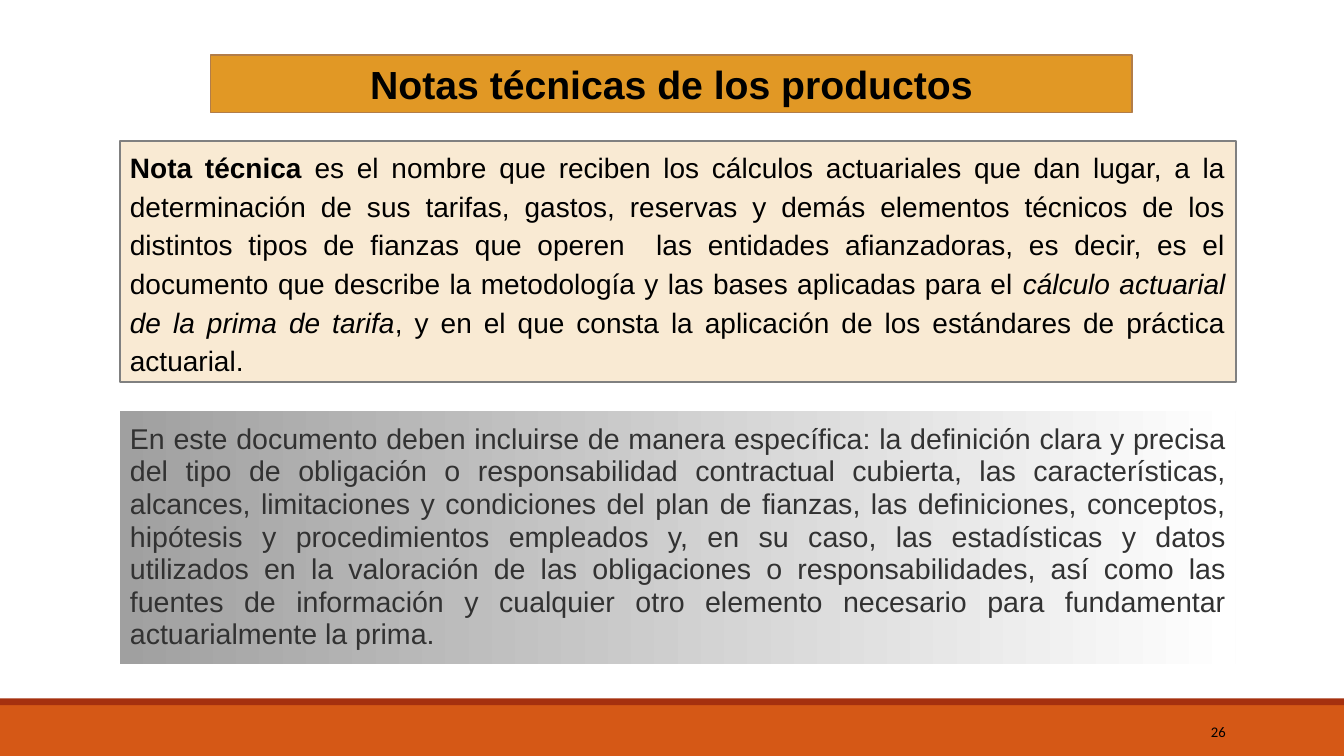
"""Build the slide on the technical notes of surety products."""
from dataclasses import dataclass

from lxml import etree
from pptx import Presentation
from pptx.dml.color import RGBColor
from pptx.enum.shapes import MSO_SHAPE
from pptx.enum.text import MSO_ANCHOR, MSO_AUTO_SIZE, PP_ALIGN
from pptx.oxml.ns import qn
from pptx.util import Cm, Pt

RECT = MSO_SHAPE.RECTANGLE
TOP, MIDDLE = MSO_ANCHOR.TOP, MSO_ANCHOR.MIDDLE
CENTER, JUSTIFY, RIGHT = PP_ALIGN.CENTER, PP_ALIGN.JUSTIFY, PP_ALIGN.RIGHT
NO_AUTOFIT = MSO_AUTO_SIZE.NONE

BLACK = RGBColor(0x00, 0x00, 0x00)
WHITE = RGBColor(0xFF, 0xFF, 0xFF)
CHARCOAL = RGBColor(0x32, 0x32, 0x32)
SILVER = RGBColor(0xA0, 0xA0, 0xA0)
GRAY = RGBColor(0x80, 0x80, 0x80)
CREAM = RGBColor(0xF9, 0xEA, 0xD3)
AMBER = RGBColor(0xE1, 0x98, 0x25)
BROWN = RGBColor(0xB2, 0x7D, 0x49)
ORANGE = RGBColor(0xD5, 0x58, 0x16)
RED = RGBColor(0xA5, 0x30, 0x0F)

SLIDE_W, SLIDE_H = Cm(33.87), Cm(19.05)
LEFT, WIDTH = 3.02, 28.12


@dataclass
class Run:
    text: str
    bold: bool = False
    italic: bool = False


@dataclass
class Style:
    size: float
    color: RGBColor
    align: PP_ALIGN
    anchor: MSO_ANCHOR = MSO_ANCHOR.MIDDLE
    font: str = "Arial"
    spacing: float = 1.0
    before: float = 0
    after: float = 0


@dataclass
class Panel:
    idx: int
    box: tuple[float, float, float, float]
    runs: list[Run]
    style: Style
    fill: RGBColor | None = None
    line: RGBColor | None = None
    line_width: float = 1


@dataclass
class Band:
    top: float
    height: float
    color: RGBColor


PANELS = [
    Panel(0, (5.31, 1.39, 23.22, 1.45),
          [Run("Notas técnicas de los productos", bold=True)],
          Style(28, BLACK, CENTER, TOP), AMBER, BROWN),
    Panel(1, (LEFT, 3.55, WIDTH, 6.07),
          [Run("Nota técnica ", bold=True),
           Run("es el nombre que reciben los cálculos actuariales que dan lugar, a la "
               "determinación de sus tarifas, gastos, reservas y demás elementos técnicos "
               "de los distintos tipos de fianzas que operen  las entidades afianzadoras, "
               "es decir, es el documento que describe la metodología y las bases "
               "aplicadas para el "),
           Run("cálculo actuarial de la prima de tarifa", italic=True),
           Run(", y en el que consta la aplicación de los estándares de práctica "
               "actuarial.")],
          Style(20, BLACK, JUSTIFY, spacing=1.15, after=10), CREAM, GRAY, 1.25),
    Panel(2, (LEFT, 10.35, WIDTH, 6.38),
          [Run("En este documento deben incluirse de manera específica: la definición "
               "clara y precisa del tipo de obligación o responsabilidad contractual "
               "cubierta, las características, alcances, limitaciones y condiciones del "
               "plan de fianzas, las definiciones, conceptos, hipótesis y procedimientos "
               "empleados y, en su caso, las estadísticas y datos utilizados en la "
               "valoración de las obligaciones o responsabilidades, así como las fuentes "
               "de información y cualquier otro elemento necesario para fundamentar "
               "actuarialmente la prima.")],
          Style(20.4, CHARCOAL, JUSTIFY, spacing=0.95, before=4)),
]
BANDS = [Band(17.77, 1.28, ORANGE), Band(17.6, 0.17, RED)]


def write(shape, runs: list[Run], style: Style) -> None:
    """Fill a shape with one formatted, unbulleted paragraph."""
    tf = shape.text_frame
    tf.word_wrap = True
    tf.auto_size = NO_AUTOFIT
    tf.vertical_anchor = style.anchor
    p = tf.paragraphs[0]
    p.alignment = style.align
    p.line_spacing = style.spacing
    p.space_before, p.space_after = Pt(style.before), Pt(style.after)
    p.font.name, p.font.size = style.font, Pt(style.size)
    p.font.color.rgb = style.color
    pPr = p._p.get_or_add_pPr()
    pPr.set("marL", "0")
    pPr.set("indent", "0")
    pPr.insert_element_before(etree.Element(qn("a:buNone")), "a:tabLst", "a:defRPr")
    for run in runs:
        r = p.add_run()
        r.text = run.text
        r.font.bold, r.font.italic = run.bold, run.italic
        r.font.name, r.font.size = style.font, Pt(style.size)
        r.font.color.rgb = style.color


def draw_panel(s, panel: Panel) -> None:
    """Place, paint and fill one placeholder."""
    sp = s.placeholders[panel.idx]
    sp.left, sp.top, sp.width, sp.height = (Cm(v) for v in panel.box)
    if panel.fill is None:
        sp.fill.gradient()
        sp.fill.gradient_angle = 0
        for stop, color in zip(sp.fill.gradient_stops, (SILVER, WHITE)):
            stop.color.rgb = color
    else:
        sp.fill.solid()
        sp.fill.fore_color.rgb = panel.fill
    if panel.line is None:
        sp.line.fill.background()
    else:
        sp.line.color.rgb = panel.line
        sp.line.width = Pt(panel.line_width)
    write(sp, panel.runs, panel.style)


def draw_band(s, band: Band) -> None:
    """Draw one full-width footer band."""
    sp = s.shapes.add_shape(RECT, 0, Cm(band.top), SLIDE_W, Cm(band.height))
    sp.shadow.inherit = False
    sp.fill.solid()
    sp.fill.fore_color.rgb = band.color
    sp.line.fill.background()


def main() -> None:
    """Assemble and save the slide."""
    prs = Presentation()
    prs.slide_width, prs.slide_height = SLIDE_W, SLIDE_H
    s = prs.slides.add_slide(prs.slide_layouts.get_by_name("Two Content"))
    for band in BANDS:
        draw_band(s, band)
    for panel in PANELS:
        draw_panel(s, panel)
    number = s.shapes.add_textbox(Cm(27.51), Cm(17.93), Cm(3.63), Cm(1.02))
    write(number, [Run("26")], Style(10.5, BLACK, RIGHT, font="Calibri"))
    prs.save("out.pptx")


if __name__ == "__main__":
    main()
